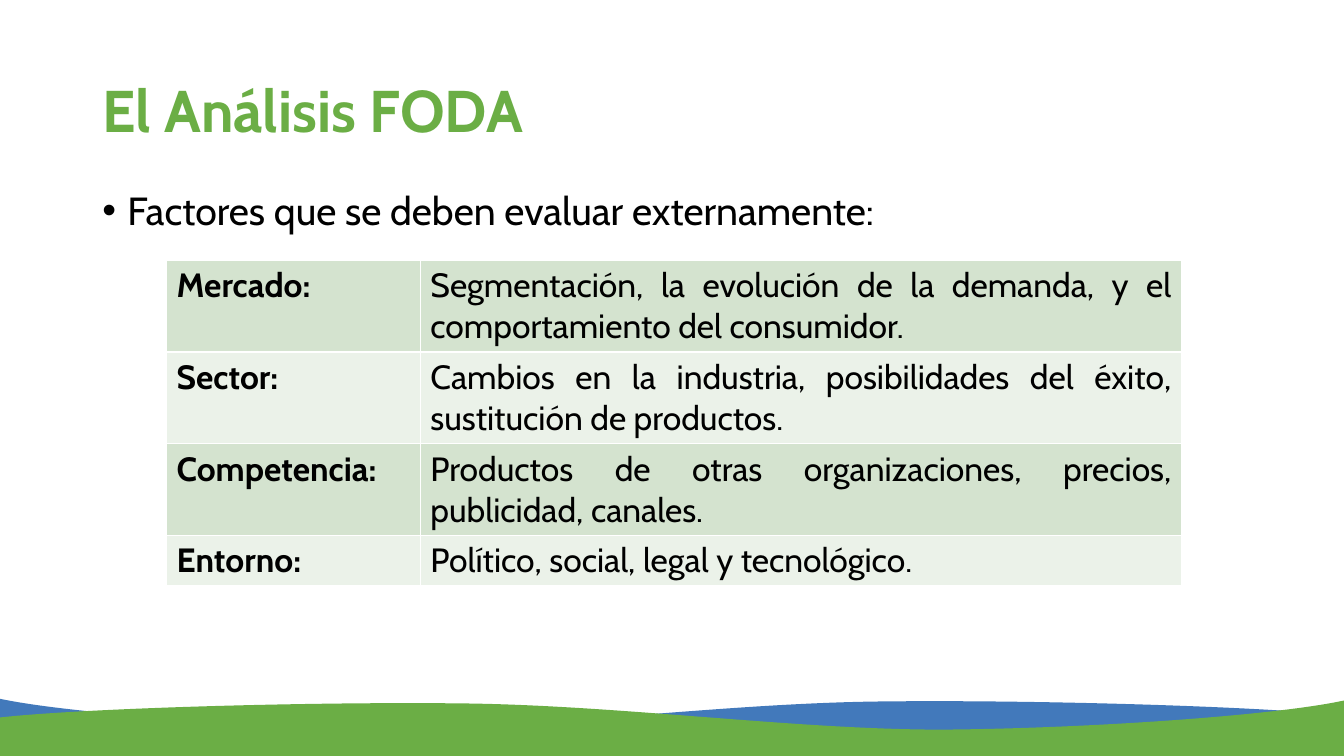
from pptx import Presentation
from pptx.dml.color import RGBColor
from pptx.enum.text import MSO_ANCHOR as Anchor, PP_ALIGN as Align
from pptx.oxml import parse_xml
from pptx.oxml.ns import nsdecls, qn
from pptx.util import Pt

COLORS = {
    "green": "6BAE45",
    "blue": "4279BB",
    "black": "000000",
    "white": "FFFFFF",
    "band_dark": "D4E3CF",
    "band_light": "EBF2E9",
}
FONT = "Cabin"
WIDTH, HEIGHT = 960, 540
UNITS_PER_POINT = 100
CREST = [(960.7, 12.2), (904.7, 5.7), (739.7, 0.7), (627.1, 2.1), (515.5, 3.6),
         (391.7, 20.8), (287.3, 20.8), (182.7, 20), (49.7, 10.8), (0, 0)]
FACTORS = [
    ("Mercado:", "Segmentación, la evolución de la demanda, y el comportamiento del consumidor."),
    ("Sector:", "Cambios en la industria, posibilidades del éxito, sustitución de productos."),
    ("Competencia:", "Productos de otras organizaciones, precios, publicidad, canales."),
    ("Entorno:", "Político, social, legal y tecnológico."),
]
ROW_HEIGHTS = [65.5, 65.5, 65.5, 36]


def color(name):
    """Return the palette colour with this name."""
    return RGBColor.from_string(COLORS[name])


def add_run(paragraph, text, size, color_name="black", bold=False):
    """Add one formatted run to a paragraph."""
    run = paragraph.add_run()
    run.text = text
    run.font.name = FONT
    run.font.size = Pt(size)
    run.font.bold = bold
    run.font.color.rgb = color(color_name)


def add_text_box(slide, box, anchor):
    """Add a wrapping text box and return its first paragraph."""
    frame = slide.shapes.add_textbox(*map(Pt, box)).text_frame
    frame.word_wrap = True
    frame.vertical_anchor = anchor
    paragraph = frame.paragraphs[0]
    paragraph.line_spacing = 0.9
    return paragraph


def curve_segments(shape, count):
    """Turn the first straight segments, three at a time, into cubic curves."""
    segments = list(shape._element.iter(qn("a:lnTo")))[:count]
    for first in range(0, count, 3):
        curve = parse_xml(f'<a:cubicBezTo {nsdecls("a")}/>')
        segments[first].addprevious(curve)
        for segment in segments[first:first + 3]:
            curve.append(segment[0])
            segment.getparent().remove(segment)


def add_wave(slide, box, color_name, mirrored=False):
    """Fill the box below a wavy crest."""
    left, top, width, height = box
    crest = [(left + (width - x if mirrored else x), top + y) for x, y in CREST]
    corners = [(crest[-1][0], top + height), (crest[0][0], top + height)]
    outline = [(x * UNITS_PER_POINT, y * UNITS_PER_POINT) for x, y in crest + corners]
    builder = slide.shapes.build_freeform(*outline[0], scale=Pt(1) / UNITS_PER_POINT)
    builder.add_line_segments(outline[1:], close=True)
    wave = builder.convert_to_shape()
    curve_segments(wave, len(CREST) - 1)
    wave.shadow.inherit = False
    wave.fill.solid()
    wave.fill.fore_color.rgb = color(color_name)
    wave.line.fill.background()


def add_footer(slide, box):
    """Draw the blue wave and its mirrored green wave."""
    left, top, width, height = box
    add_wave(slide, box, "blue")
    add_wave(slide, (left, top + 1.4, width, height), "green", mirrored=True)


def add_title(slide, box):
    """Write the slide title."""
    paragraph = add_text_box(slide, box, Anchor.MIDDLE)
    add_run(paragraph, "El Análisis FODA", 42, "green", bold=True)


def add_intro(slide, box):
    """Write the bulleted lead-in sentence."""
    paragraph = add_text_box(slide, box, Anchor.TOP)
    paragraph.space_before = Pt(10)
    properties = paragraph._p.get_or_add_pPr()
    properties.set("marL", str(Pt(18)))
    properties.set("indent", str(-Pt(18)))
    properties.append(parse_xml(f'<a:buFont {nsdecls("a")} typeface="Arial"/>'))
    properties.append(parse_xml(f'<a:buChar {nsdecls("a")} char="•"/>'))
    add_run(paragraph, "Factores que se deben evaluar externamente:", 28)


def style_cell(cell, fill_name):
    """Give a cell its fill and thin white borders."""
    properties = cell._tc.get_or_add_tcPr()
    for side in "LRTB":
        properties.append(parse_xml(
            f'<a:ln{side} {nsdecls("a")} w="{Pt(1)}"><a:solidFill>'
            f'<a:srgbClr val="{COLORS["white"]}"/></a:solidFill></a:ln{side}>'))
    cell.fill.solid()
    cell.fill.fore_color.rgb = color(fill_name)


def add_factor_table(slide, box):
    """List each external factor beside its description."""
    left, top, width, height = box
    table = slide.shapes.add_table(len(FACTORS), 2, *map(Pt, box)).table
    table.first_row = False
    table.horz_banding = False
    table.columns[0].width = Pt(width / 4)
    table.columns[1].width = Pt(width * 3 / 4)
    for row, factor in enumerate(FACTORS):
        table.rows[row].height = Pt(ROW_HEIGHTS[row])
        for column, text in enumerate(factor):
            cell = table.cell(row, column)
            style_cell(cell, "band_light" if row % 2 else "band_dark")
            paragraph = cell.text_frame.paragraphs[0]
            paragraph.alignment = Align.JUSTIFY if column else Align.LEFT
            add_run(paragraph, text, 24, bold=column == 0)


def main():
    """Build the slide and save it."""
    presentation = Presentation()
    presentation.slide_width = Pt(WIDTH)
    presentation.slide_height = Pt(HEIGHT)
    slide = presentation.slides.add_slide(presentation.slide_layouts[6])
    add_footer(slide, (-0.7, 499, 960.7, 41))
    add_title(slide, (66, 28.8, 828, 104.4))
    add_intro(slide, (66, 133.2, 828, 52.5))
    add_factor_table(slide, (119, 186, 725, sum(ROW_HEIGHTS)))
    presentation.save("out.pptx")


if __name__ == "__main__":
    main()
